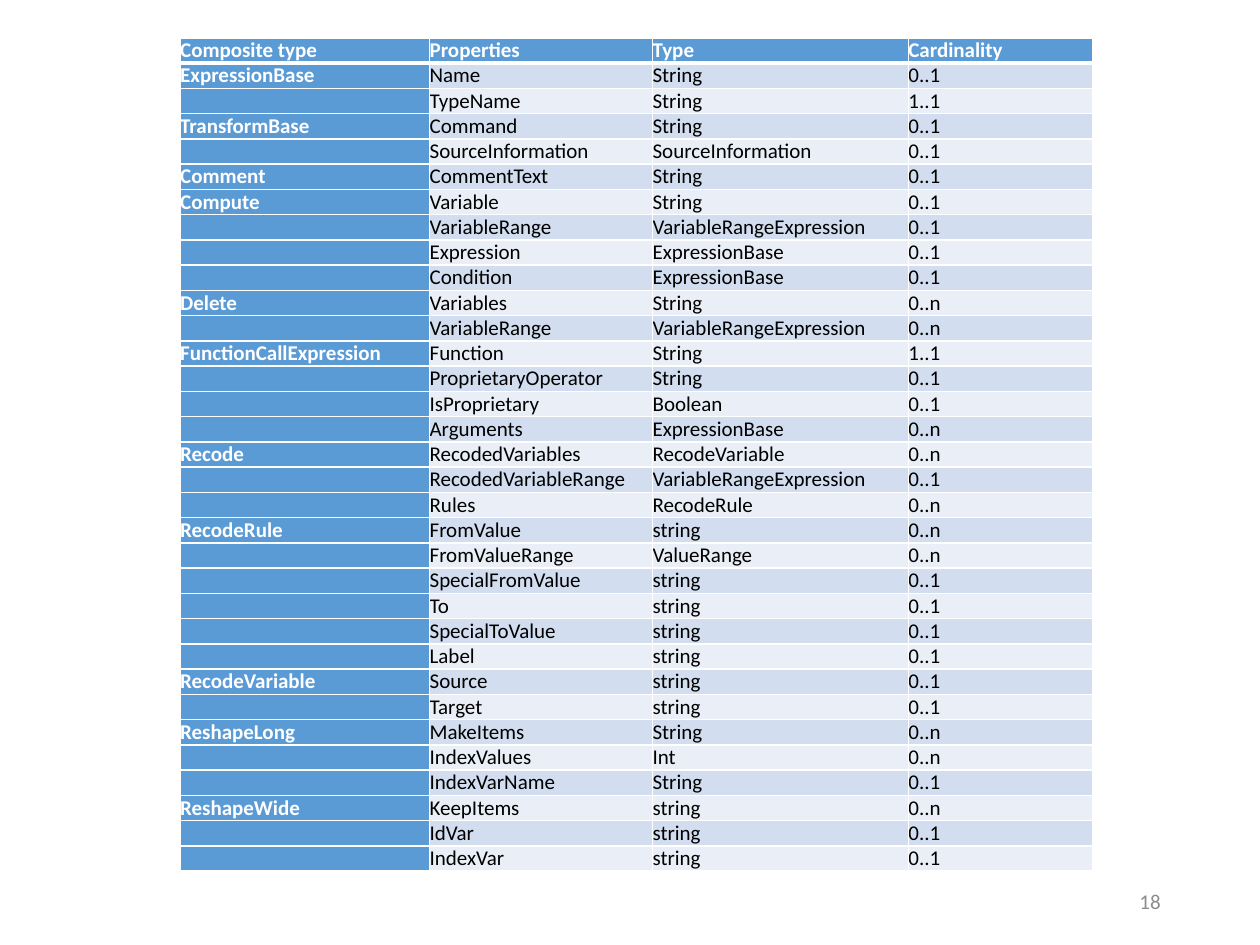
from dataclasses import dataclass

from lxml import etree
from pptx import Presentation
from pptx import util as u
from pptx.dml.color import RGBColor
from pptx.enum import text
from pptx.oxml import ns

COLOURS = {
    "accent": "5B9BD5",
    "odd": "D2DEEF",
    "even": "EAEFF7",
    "light": "FFFFFF",
    "dark": "000000",
    "number": "8C8C8C",
}
HEADINGS = ("Composite type", "Properties", "Type", "Cardinality")
COLUMN_WIDTHS = (1.98, 1.77, 2.03, 1.46)
ROW_HEIGHT = 0.15
FONT_NAME, FONT_SIZE = "Calibri", u.Pt(12)
CELL_FORMAT = {
    "margin_left": 0,
    "margin_top": 0,
    "margin_right": 0,
    "margin_bottom": 0,
    "vertical_anchor": text.MSO_ANCHOR.MIDDLE,
}


@dataclass(frozen=True)
class CompositeType:
    """A composite type with its (name, type, cardinality) properties."""

    name: str
    properties: tuple[tuple[str, str, str], ...]


COMPOSITE_TYPES = (
    CompositeType("ExpressionBase", (
        ("Name", "String", "0..1"),
        ("TypeName", "String", "1..1"),
    )),
    CompositeType("TransformBase", (
        ("Command", "String", "0..1"),
        ("SourceInformation", "SourceInformation", "0..1"),
    )),
    CompositeType("Comment", (("CommentText", "String", "0..1"),)),
    CompositeType("Compute", (
        ("Variable", "String", "0..1"),
        ("VariableRange", "VariableRangeExpression", "0..1"),
        ("Expression", "ExpressionBase", "0..1"),
        ("Condition", "ExpressionBase", "0..1"),
    )),
    CompositeType("Delete", (
        ("Variables", "String", "0..n"),
        ("VariableRange", "VariableRangeExpression", "0..n"),
    )),
    CompositeType("FunctionCallExpression", (
        ("Function", "String", "1..1"),
        ("ProprietaryOperator", "String", "0..1"),
        ("IsProprietary", "Boolean", "0..1"),
        ("Arguments", "ExpressionBase", "0..n"),
    )),
    CompositeType("Recode", (
        ("RecodedVariables", "RecodeVariable", "0..n"),
        ("RecodedVariableRange", "VariableRangeExpression", "0..1"),
        ("Rules", "RecodeRule", "0..n"),
    )),
    CompositeType("RecodeRule", (
        ("FromValue", "string", "0..n"),
        ("FromValueRange", "ValueRange", "0..n"),
        ("SpecialFromValue", "string", "0..1"),
        ("To", "string", "0..1"),
        ("SpecialToValue", "string", "0..1"),
        ("Label", "string", "0..1"),
    )),
    CompositeType("RecodeVariable", (
        ("Source", "string", "0..1"),
        ("Target", "string", "0..1"),
    )),
    CompositeType("ReshapeLong", (
        ("MakeItems", "String", "0..n"),
        ("IndexValues", "Int", "0..n"),
        ("IndexVarName", "String", "0..1"),
    )),
    CompositeType("ReshapeWide", (
        ("KeepItems", "string", "0..n"),
        ("IdVar", "string", "0..1"),
        ("IndexVar", "string", "0..1"),
    )),
)


def apply_format(target, values: dict) -> None:
    """Set each named attribute on the target."""
    for name, value in values.items():
        setattr(target, name, value)


def write_span(para, words: str, colour: str, bold: bool = False) -> None:
    """Add one formatted span to a paragraph."""
    span = para.add_run()
    span.text = words
    apply_format(span.font, {"name": FONT_NAME, "size": FONT_SIZE, "bold": bold})
    span.font.color.rgb = RGBColor.from_string(COLOURS[colour])


def draw_borders(cell, bottom_points: int) -> None:
    """Give a cell white borders, placed ahead of its fill."""
    properties = cell._tc.get_or_add_tcPr()
    widths = {"a:lnL": 1, "a:lnR": 1, "a:lnT": 1, "a:lnB": bottom_points}
    for position, (tag, points) in enumerate(widths.items()):
        line = etree.Element(ns.qn(tag), w=str(u.Pt(points)))
        fill = etree.SubElement(line, ns.qn("a:solidFill"))
        etree.SubElement(fill, ns.qn("a:srgbClr"), val=COLOURS["light"])
        properties.insert(position, line)


def fill_cell(cell, words: str, row: int, column: int) -> None:
    """Write and style one table cell by its position."""
    strong = row == 0 or column == 0
    band = "accent" if strong else "odd" if row % 2 else "even"
    apply_format(cell, CELL_FORMAT)
    cell.fill.solid()
    cell.fill.fore_color.rgb = RGBColor.from_string(COLOURS[band])
    draw_borders(cell, 3 if row == 0 else 1)
    para = cell.text_frame.paragraphs[0]
    if words:
        write_span(para, words, "light" if strong else "dark", strong)
    else:
        size = str(int(FONT_SIZE.pt * 100))
        etree.SubElement(para._p, ns.qn("a:endParaRPr"), sz=size)


def draw_type_table(page) -> None:
    """Draw the table of composite types."""
    rows = [HEADINGS] + [
        (kind.name if index == 0 else "", *entry)
        for kind in COMPOSITE_TYPES
        for index, entry in enumerate(kind.properties)
    ]
    height = u.Inches(6.74)
    frame = page.shapes.add_table(
        len(rows), len(HEADINGS), u.Inches(1.43), u.Inches(0.3), u.Inches(7.25), height
    )
    table = frame.table
    for column, width in zip(table.columns, COLUMN_WIDTHS):
        column.width = u.Inches(width)
    for row, words in enumerate(rows):
        table.rows[row].height = u.Inches(ROW_HEIGHT)
        for column, word in enumerate(words):
            fill_cell(table.cell(row, column), word, row, column)
    frame.height = height


def draw_page_number(page, number: str) -> None:
    """Draw the page number at the lower right."""
    box = page.shapes.add_textbox(
        u.Inches(7.06), u.Inches(6.95), u.Inches(2.25), u.Inches(0.4)
    )
    apply_format(
        box.text_frame,
        {"word_wrap": True, "vertical_anchor": text.MSO_ANCHOR.MIDDLE},
    )
    para = box.text_frame.paragraphs[0]
    para.alignment = text.PP_ALIGN.RIGHT
    write_span(para, number, "number")


def main() -> None:
    """Build and save the deck."""
    deck = Presentation()
    apply_format(deck, {"slide_width": u.Inches(10), "slide_height": u.Inches(7.5)})
    page = deck.slides.add_slide(deck.slide_layouts[6])
    draw_page_number(page, "18")
    draw_type_table(page)
    deck.save("out.pptx")


if __name__ == "__main__":
    main()
